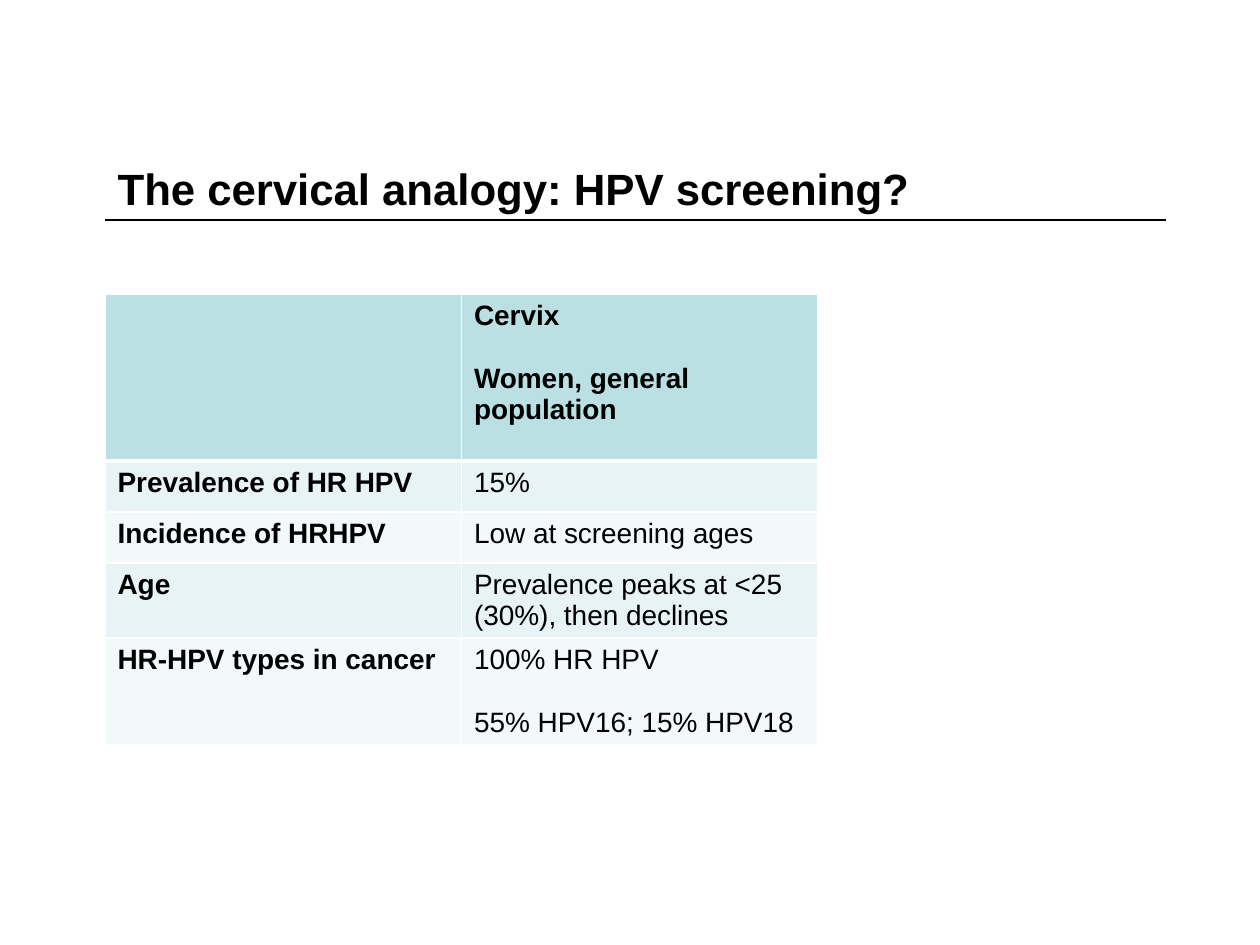
from lxml import etree
from pptx import Presentation
from pptx.dml.color import RGBColor
from pptx.enum.shapes import MSO_CONNECTOR
from pptx.enum.text import MSO_ANCHOR, PP_ALIGN
from pptx.oxml.ns import qn
from pptx.util import Pt

LINE = MSO_CONNECTOR.STRAIGHT
TOP = MSO_ANCHOR.TOP
LEFT = PP_ALIGN.LEFT

BLACK = RGBColor(0x00, 0x00, 0x00)
WHITE = RGBColor(0xFF, 0xFF, 0xFF)
TEAL = RGBColor(0xBB, 0xE0, 0xE3)
PALE = RGBColor(0xE7, 0xF3, 0xF4)
FAINT = RGBColor(0xF3, 0xF9, 0xFA)

FONT = "Arial"
SCALE = 914400 / 126

ROWS = [
    (167, "", "Cervix\nWomen, general population"),
    (51, "Prevalence of HR HPV", "15%"),
    (51, "Incidence of HRHPV", "Low at screening ages"),
    (75, "Age", "Prevalence peaks at <25 (30%), then declines"),
    (105, "HR-HPV types in cancer", "100% HR HPV\n55% HPV16; 15% HPV18"),
]


def px(n):
    return round(n * SCALE)


def style(para, size, bold):
    para.alignment = LEFT
    for run in para.runs:
        font = run.font
        font.name = FONT
        font.size = Pt(size)
        font.bold = bold
        font.color.rgb = BLACK


def add_title(slide, x, y, w, h):
    title = slide.shapes.title
    title.left, title.top, title.width, title.height = map(px, (x, y, w, h))
    frame = title.text_frame
    frame.text = "The cervical analogy: HPV screening?"
    frame.vertical_anchor = TOP
    frame.margin_top = px(12)
    style(frame.paragraphs[0], 25, True)

    rule_y = px(y + 70)
    rule = slide.shapes.add_connector(LINE, px(x), rule_y, px(x + 1061), rule_y)
    rule.line.color.rgb = BLACK
    rule.line.width = Pt(0.75)
    etree.SubElement(rule._element.spPr, qn("a:effectLst"))


def add_edges(cell, top, base):
    props = cell._tc.get_or_add_tcPr()
    for side, width in (("L", 1), ("R", 1), ("T", top), ("B", base)):
        edge = etree.SubElement(props, qn("a:ln" + side), w=str(Pt(width)))
        fill = etree.SubElement(edge, qn("a:solidFill"))
        etree.SubElement(fill, qn("a:srgbClr"), val=str(WHITE))


def fill_cell(cell, text, bold, color):
    cell.fill.solid()
    cell.fill.fore_color.rgb = color
    cell.vertical_anchor = TOP
    cell.text_frame.text = text
    for i, para in enumerate(cell.text_frame.paragraphs):
        style(para, 16, bold)
        if i:
            para.space_before = Pt(18)


def add_grid(slide, x, y, w):
    high = sum(row[0] for row in ROWS)
    frame = slide.shapes.add_table(len(ROWS), 2, px(x), px(y), px(w), px(high))
    table = frame.table
    for r, (tall, *texts) in enumerate(ROWS):
        table.rows[r].height = px(tall)
        color = TEAL if r == 0 else PALE if r % 2 else FAINT
        for c, text in enumerate(texts):
            cell = table.cell(r, c)
            add_edges(cell, 3 if r == 1 else 1, 3 if r == 0 else 1)
            fill_cell(cell, text, r == 0 or c == 0, color)


def main():
    deck = Presentation()
    deck.slide_width = px(1260)
    deck.slide_height = px(945)
    slide = deck.slides.add_slide(deck.slide_layouts[5])
    add_title(slide, 105, 150, 1071, 84)
    add_grid(slide, 105, 294, 713)
    deck.save("out.pptx")


if __name__ == "__main__":
    main()
